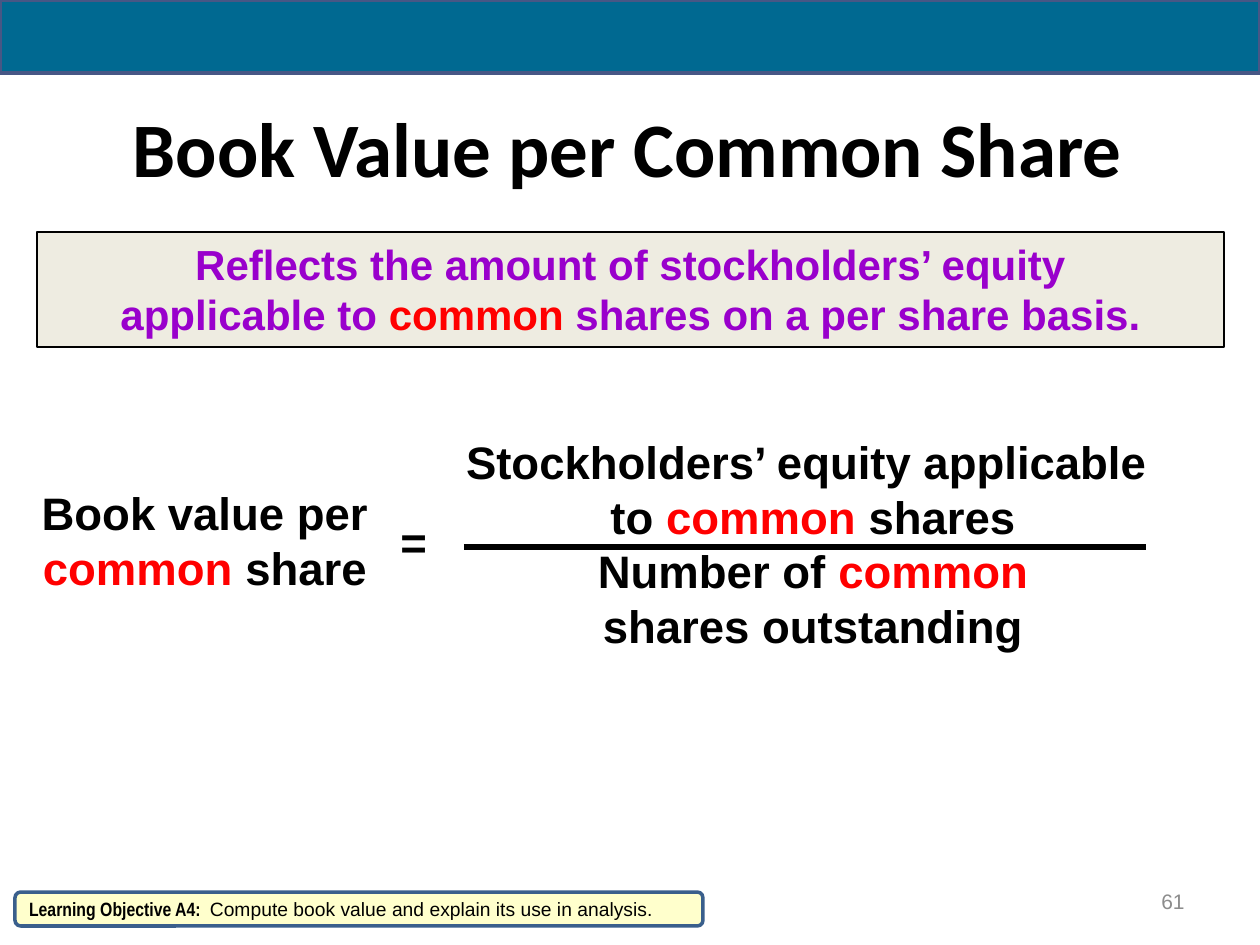
from dataclasses import dataclass

from lxml import etree
from pptx import Presentation
from pptx import util as u
from pptx.dml.color import RGBColor
from pptx.enum import shapes, text
from pptx.oxml.ns import qn

SCALE = 914400 / 126  # EMU per px
COLORS = {
    "black": "000000", "red": "FF0000", "purple": "9900CC", "grey": "8C8C8C",
    "teal": "006991", "indigo": "475785", "beige": "EEECE1",
    "cream": "FFFFCC", "navy": "3A5F8C",
}
ALIGN = text.PP_ALIGN
ANCHOR = text.MSO_ANCHOR
SHAPE = shapes.MSO_SHAPE


@dataclass(frozen=True)
class Run:
    text: str
    color: str = "black"
    size: int = 26
    font: str = "Arial"
    bold: bool = True


@dataclass(frozen=True)
class Label:
    """Paragraphs of runs in a box; a newline in a run is a line break."""
    box: tuple[int, int, int, int]
    paragraphs: list[list[Run]]
    align: ALIGN = ALIGN.CENTER
    anchor: ANCHOR = ANCHOR.TOP
    wrap: bool = False


@dataclass(frozen=True)
class Panel:
    kind: SHAPE
    fill: str
    line: str
    width: float
    label: Label


def px(n: int) -> u.Emu:
    return u.Emu(round(n * SCALE))


def rgb(name: str) -> RGBColor:
    return RGBColor.from_string(COLORS[name])


def add_run(p, run: Run) -> None:
    for i, line in enumerate(run.text.split("\n")):
        if i:
            p.add_line_break()
        if line:
            r = p.add_run()
            r.text = line
            r.font.name, r.font.size, r.font.bold = run.font, u.Pt(run.size), run.bold
            r.font.color.rgb = rgb(run.color)


def fill_text(tf, label: Label) -> None:
    tf.word_wrap = label.wrap
    tf.vertical_anchor = label.anchor
    for i, runs in enumerate(label.paragraphs):
        p = tf.add_paragraph() if i else tf.paragraphs[0]
        p.alignment = label.align
        for run in runs:
            add_run(p, run)


def add_label(s, label: Label) -> None:
    fill_text(s.shapes.add_textbox(*map(px, label.box)).text_frame, label)


def add_panel(s, panel: Panel) -> None:
    sp = s.shapes.add_shape(panel.kind, *map(px, panel.label.box))
    sp.shadow.inherit = False
    sp.fill.solid()
    sp.fill.fore_color.rgb = rgb(panel.fill)
    sp.line.color.rgb = rgb(panel.line)
    sp.line.width = u.Pt(panel.width)
    fill_text(sp.text_frame, panel.label)


def add_fraction_bar(s, left: int, right: int, y: int) -> None:
    bar = s.shapes.add_connector(shapes.MSO_CONNECTOR.STRAIGHT,
                                 px(left), px(y), px(right), px(y))
    bar.line.color.rgb = rgb("black")
    bar.line.width = u.Pt(3)
    etree.SubElement(bar._element.spPr, qn("a:effectLst"))


COMMON = Run("common", "red")

LABELS = [
    Label((40, 73, 1176, 147),
          [[Run("Book Value per Common Share", size=44, font="Calibri")]],
          anchor=ANCHOR.MIDDLE, wrap=True),
    Label((21, 479, 368, 122), [[Run("Book value per\n"), COMMON, Run(" share")]]),
    Label((388, 508, 52, 68), [[Run("=")]], align=ALIGN.LEFT),
    Label((450, 428, 726, 233), [
        [Run("Stockholders’ equity applicable \nto "), COMMON, Run(" shares")],
        [Run("Number of "), COMMON, Run("\nshares outstanding")],
    ]),
    Label((903, 876, 294, 50), [[Run("61", "grey", 12, bold=False)]],
          align=ALIGN.RIGHT, anchor=ANCHOR.MIDDLE, wrap=True),
]

PANELS = [
    Panel(SHAPE.RECTANGLE, "beige", "black", 1.5, Label((37, 232, 1187, 115), [[
        Run("Reflects the amount of stockholders’ equity\napplicable to ", "purple", 24),
        Run("common", "red", 24),
        Run(" shares on a per share basis.", "purple", 24),
    ]], wrap=True)),
    Panel(SHAPE.RECTANGLE, "teal", "indigo", 2.25, Label((0, 0, 1260, 73), [])),
    Panel(SHAPE.ROUNDED_RECTANGLE, "cream", "navy", 2, Label((15, 892, 688, 34), [[
        Run("Learning Objective A4:  ", size=11, font="Arial Narrow"),
        Run("Compute book value and explain its use in analysis.", size=11, bold=False),
    ]], align=ALIGN.LEFT, anchor=ANCHOR.MIDDLE, wrap=True)),
]


def main() -> None:
    prs = Presentation()
    prs.slide_width, prs.slide_height = px(1260), px(945)
    s = prs.slides.add_slide(prs.slide_layouts[6])
    for label in LABELS:
        add_label(s, label)
    add_fraction_bar(s, 464, 1146, 547)
    for panel in PANELS:
        add_panel(s, panel)
    prs.save("out.pptx")


if __name__ == "__main__":
    main()
